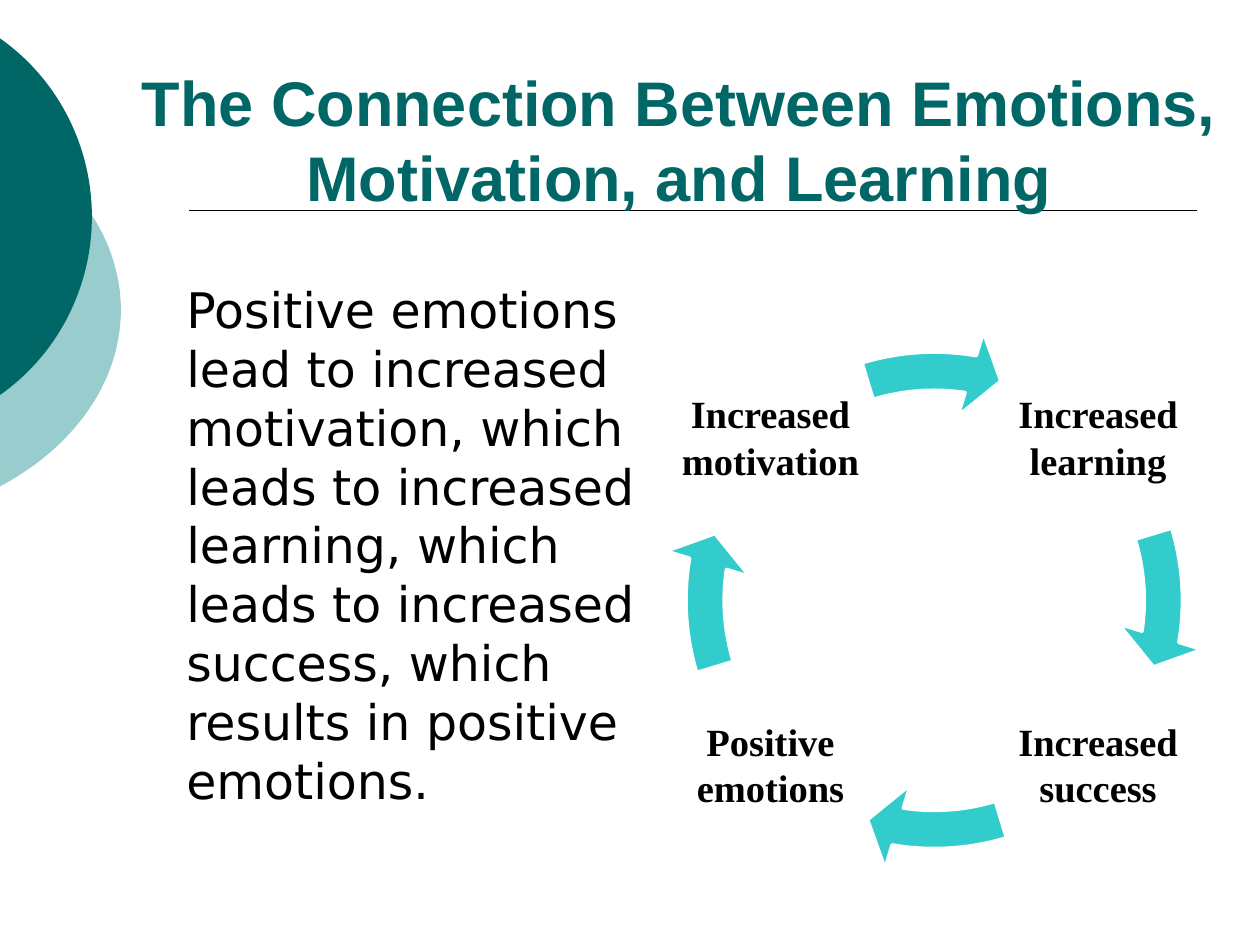
from math import cos, pi, sin, sqrt

from pptx import Presentation
from pptx import util as u
from pptx.dml.color import RGBColor
from pptx.enum import shapes, text

TEAL = RGBColor(0x00, 0x66, 0x66)
PALE_TEAL = RGBColor(0x99, 0xCC, 0xCC)
TURQUOISE = RGBColor(0x33, 0xCC, 0xCC)
BLACK = RGBColor(0, 0, 0)
WHITE = RGBColor(0xFF, 0xFF, 0xFF)

WIDTH, HEIGHT = 10, 7.5
CYCLE_LEFT, CYCLE_TOP, CYCLE_SIZE = 5.25, 2.6, 4.33
LABEL_COLUMNS = (5.35, 7.95)
LABEL_ROWS = (2.7, 5.3)
LABEL_SIZE = 1.53
# Clockwise from the top right: label, column, row
STAGES = (
    ("Increased learning", 1, 0),
    ("Increased success", 1, 1),
    ("Positive emotions", 0, 1),
    ("Increased motivation", 0, 0),
)
DEGREE = 0.6  # adjustment units in one degree


def inches(*lengths):
    return [u.Inches(length) for length in lengths]


def add_edge_disc(slide, center_x, center_y, radius_x, radius_y, color):
    """Draw the part of an ellipse that lies right of the slide's left edge."""
    steps = 60
    cosine = -center_x / radius_x
    half_height = sqrt(1 - cosine ** 2)
    top_angle = pi / 2 - cosine  # first guess, refined below
    for _ in range(5):
        top_angle -= (sin(top_angle) - half_height) / cos(top_angle)
    angles = [top_angle * (2 * i / steps - 1) for i in range(steps + 1)]
    points = [(max(0, center_x + radius_x * cos(a)) * u.Inches(1),
               (center_y + radius_y * sin(a)) * u.Inches(1)) for a in angles]
    builder = slide.shapes.build_freeform(*points[0])
    builder.add_line_segments(points[1:], close=True)
    disc = builder.convert_to_shape()
    disc.shadow.inherit = False
    disc.fill.solid()
    disc.fill.fore_color.rgb = color
    disc.line.fill.background()


def add_rule(slide, left, right, y):
    rule = slide.shapes.add_connector(
        shapes.MSO_CONNECTOR.STRAIGHT, *inches(left, y, right, y))
    rule.line.color.rgb = BLACK
    rule.line.width = u.Pt(1)
    properties = rule._element.spPr
    properties.append(properties.makeelement(
        "{http://schemas.openxmlformats.org/drawingml/2006/main}effectLst", {}))


def add_text(slide, box, words, font_name, size, color=BLACK, bold=False,
             align=text.PP_ALIGN.CENTER, anchor=text.MSO_ANCHOR.MIDDLE):
    frame = slide.shapes.add_textbox(*inches(*box)).text_frame
    frame.word_wrap = True
    frame.vertical_anchor = anchor
    paragraph = frame.paragraphs[0]
    paragraph.text = words
    paragraph.alignment = align
    font = paragraph.font
    font.name, font.size, font.bold = font_name, u.Pt(size), bold
    font.color.rgb = color
    return frame


def add_stage(slide, index, label, column, row):
    """Add one label of the cycle and the arrow in its quarter."""
    box = LABEL_COLUMNS[column], LABEL_ROWS[row], LABEL_SIZE, LABEL_SIZE
    frame = add_text(slide, box, label, "Times New Roman", 22, bold=True)
    frame.margin_left = frame.margin_right = u.Inches(0.03)
    frame.margin_top = frame.margin_bottom = u.Inches(0.03)

    arrow = slide.shapes.add_shape(
        shapes.MSO_SHAPE.CIRCULAR_ARROW,
        *inches(CYCLE_LEFT, CYCLE_TOP, CYCLE_SIZE, CYCLE_SIZE))
    end, start = ((angle + 90 * index) % 360 for angle in (9.16, 343.09))
    values = 0.07, 7.75 * DEGREE, end * DEGREE, start * DEGREE, 0.08
    for number, value in enumerate(values):
        arrow.adjustments[number] = value
    arrow.shadow.inherit = False
    arrow.fill.solid()
    arrow.fill.fore_color.rgb = TURQUOISE
    arrow.line.color.rgb = WHITE
    arrow.line.width = u.Pt(2)


def main():
    presentation = Presentation()
    presentation.slide_width, presentation.slide_height = inches(WIDTH, HEIGHT)
    slide = presentation.slides.add_slide(presentation.slide_layouts[6])

    add_edge_disc(slide, -1.29, 2.46, 2.25, 1.71, PALE_TEAL)
    add_edge_disc(slide, -0.96, 1.72, 1.69, 1.72, TEAL)
    add_rule(slide, 0.15 * WIDTH, 0.95 * WIDTH, 1.67)
    add_text(slide, (1, 0, 8.78, 1.75),
             "The Connection Between Emotions, Motivation, and Learning",
             "Arial", 36, TEAL, True, anchor=text.MSO_ANCHOR.BOTTOM)
    body = add_text(
        slide, (1, 2.17, 4.17, 4.5),
        "Positive emotions lead to increased motivation, which leads to "
        "increased learning, which leads to increased success, which results "
        "in positive emotions.",
        "DejaVu Sans", 28, align=text.PP_ALIGN.LEFT,
        anchor=text.MSO_ANCHOR.TOP)
    body.margin_left = u.Inches(0.48)
    for index, stage in enumerate(STAGES):
        add_stage(slide, index, *stage)

    presentation.save("out.pptx")


if __name__ == "__main__":
    main()
